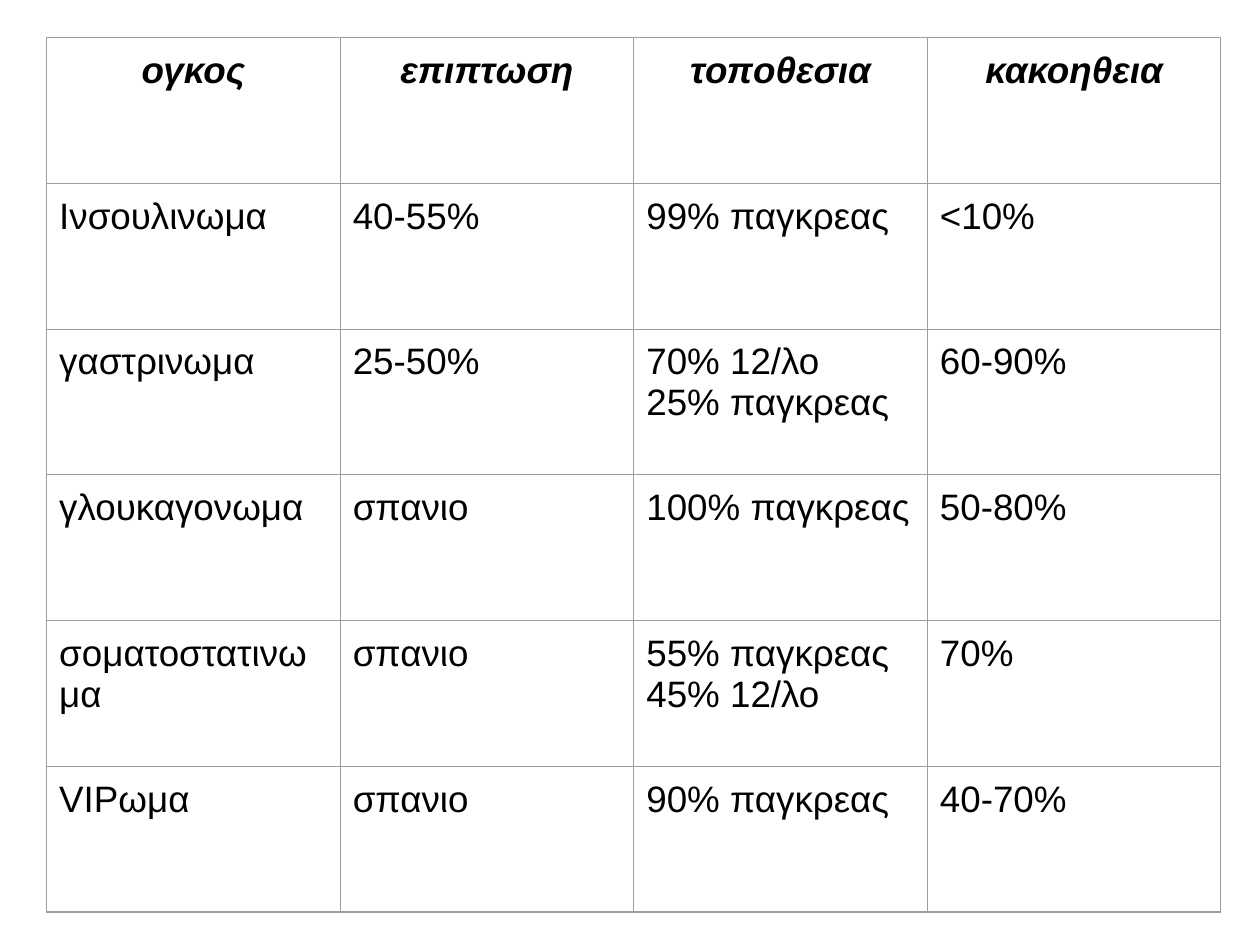
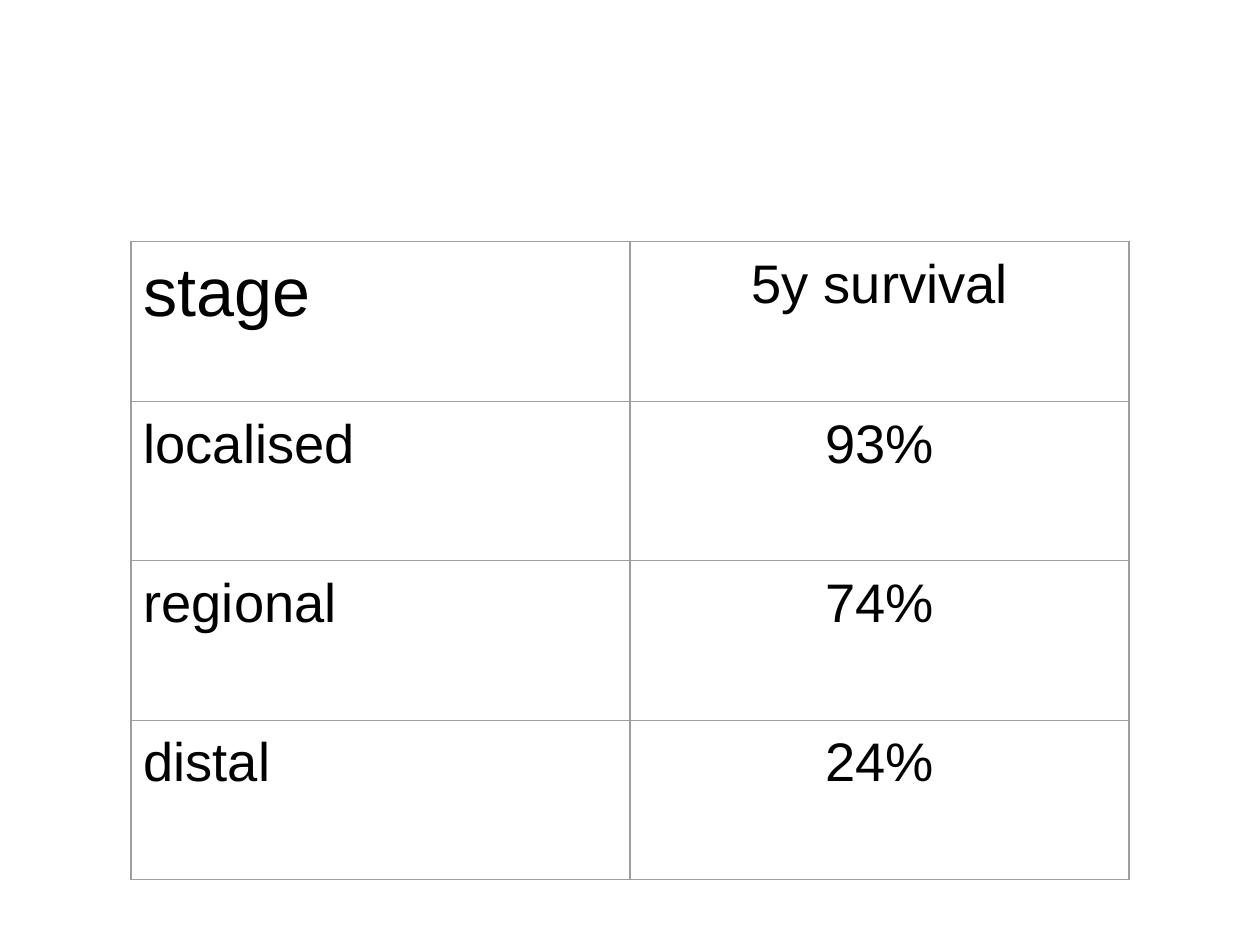
from dataclasses import dataclass

from lxml import etree
from pptx import Presentation
from pptx import util as u
from pptx.dml.color import RGBColor
from pptx.enum import text
from pptx.oxml import ns


@dataclass(frozen=True)
class Theme:
    font: str = "Arial"
    ink: str = "000000"
    paper: str = "FFFFFF"
    rule: str = "9E9E9E"
    rule_pt: float = 0.75
    inset: float = 0.1
    tumour_pt: int = 21
    survival_pt: int = 31
    stage_pt: int = 39


THEME = Theme()
LEFT, CENTER = text.PP_ALIGN.LEFT, text.PP_ALIGN.CENTER

TUMOURS = [
    ["ογκος", "επιπτωση", "τοποθεσια", "κακοηθεια"],
    ["Ινσουλινωμα", "40-55%", "99% παγκρεας", "<10%"],
    ["γαστρινωμα", "25-50%", "70% 12/λο\n25% παγκρεας", "60-90%"],
    ["γλουκαγονωμα", "σπανιο", "100% παγκρεας", "50-80%"],
    ["σοματοστατινωμα", "σπανιο", "55% παγκρεας\n45% 12/λο", "70%"],
    ["VIPωμα", "σπανιο", "90% παγκρεας", "40-70%"],
]
SURVIVAL = [
    ["stage", "5y survival"],
    ["localised", "93%"],
    ["regional", "74%"],
    ["distal", "24%"],
]


def add_slide(prs):
    s = prs.slides.add_slide(prs.slide_layouts[6])
    s.background.fill.solid()
    s.background.fill.fore_color.rgb = RGBColor.from_string(THEME.paper)
    return s


def draw_borders(cell):
    """Rule all four sides; the lines must come before the fill."""
    tcPr = cell._tc.get_or_add_tcPr()
    for i, side in enumerate(("lnL", "lnR", "lnT", "lnB")):
        ln = etree.Element(ns.qn(f"a:{side}"), w=str(u.Pt(THEME.rule_pt)))
        fill = etree.SubElement(ln, ns.qn("a:solidFill"))
        etree.SubElement(fill, ns.qn("a:srgbClr"), val=THEME.rule)
        tcPr.insert(i, ln)


def fill_cell(cell, words, size, align, emphasis):
    cell.fill.background()
    draw_borders(cell)
    cell.margin_left = cell.margin_right = u.Inches(THEME.inset)
    cell.margin_top = cell.margin_bottom = u.Inches(THEME.inset)
    tf = cell.text_frame
    for i, line in enumerate(words.split("\n")):
        p = tf.paragraphs[0] if i == 0 else tf.add_paragraph()
        p.alignment = align
        r = p.add_run()
        r.text = line
        r.font.name, r.font.size = THEME.font, u.Pt(size)
        r.font.bold = r.font.italic = emphasis
        r.font.color.rgb = RGBColor.from_string(THEME.ink)


def add_grid(s, box, rows, style):
    """Even grid in box; style(row, col) gives size, alignment, emphasis."""
    left, top, width, height = (u.Inches(v) for v in box)
    table = s.shapes.add_table(len(rows), len(rows[0]),
                               left, top, width, height).table
    table.first_row = table.horz_banding = False
    for i, row in enumerate(rows):
        for j, words in enumerate(row):
            fill_cell(table.cell(i, j), words, *style(i, j))


# Tumour types: bold italic centred header, plain rows
def tumour_slide(prs, box):
    def style(row, col):
        header = row == 0
        return THEME.tumour_pt, CENTER if header else LEFT, header

    add_grid(add_slide(prs), box, TUMOURS, style)


# Survival by stage: larger first heading, centred figures
def survival_slide(prs, box):
    def style(row, col):
        size = THEME.stage_pt if row == col == 0 else THEME.survival_pt
        return size, CENTER if col else LEFT, False

    add_grid(add_slide(prs), box, SURVIVAL, style)


def main():
    prs = Presentation()
    prs.slide_width, prs.slide_height = u.Inches(10), u.Inches(7.5)
    tumour_slide(prs, (0.37, 0.3, 9.32, 6.94))
    survival_slide(prs, (1.04, 1.92, 7.92, 5.06))
    prs.save("out.pptx")


if __name__ == "__main__":
    main()
